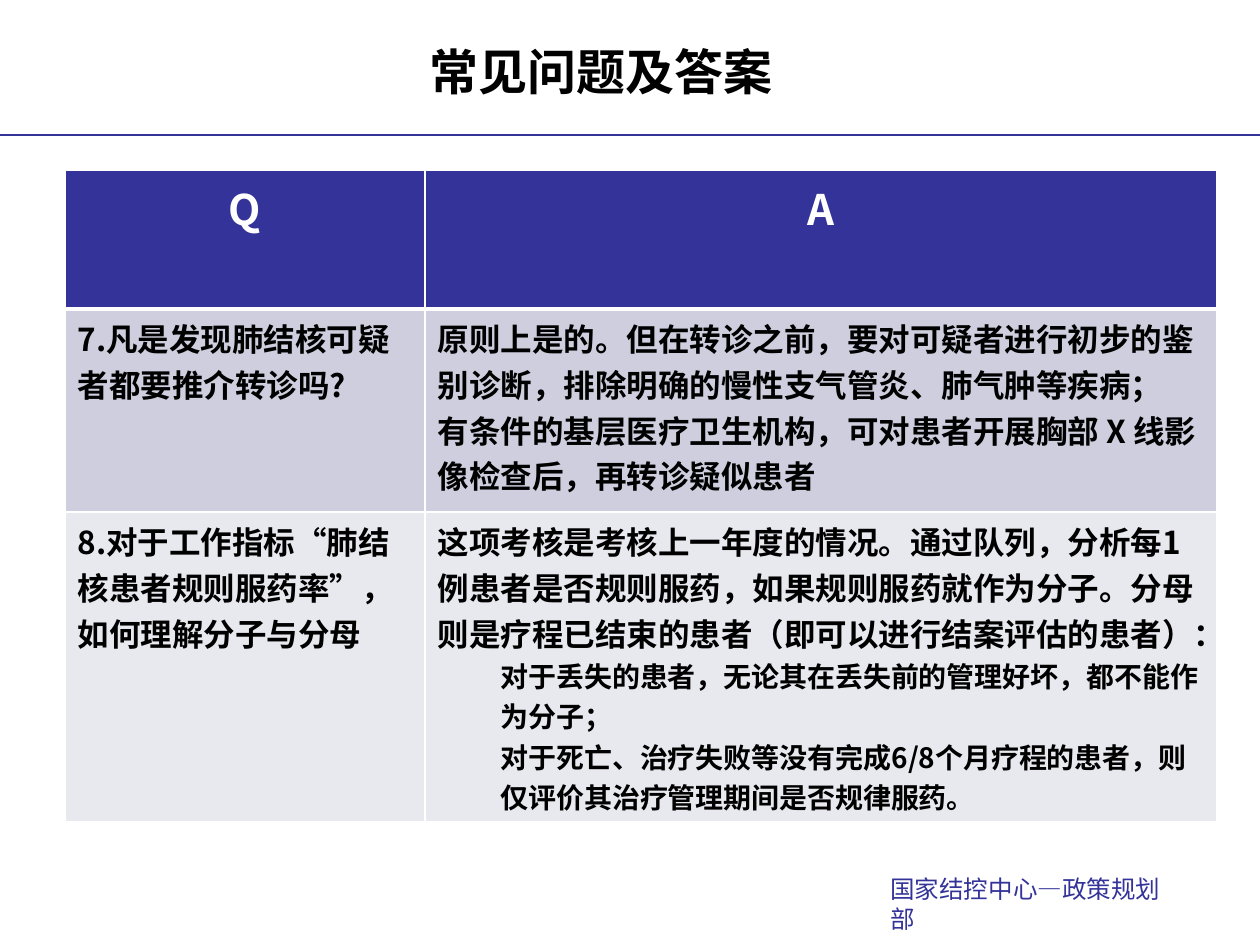
from dataclasses import dataclass

from lxml.etree import SubElement
from pptx import Presentation
from pptx.dml.color import RGBColor
from pptx.enum.text import MSO_ANCHOR, PP_ALIGN
from pptx.oxml import parse_xml
from pptx.oxml.ns import qn
from pptx.util import Pt

A_NS = "http://schemas.openxmlformats.org/drawingml/2006/main"
PX = 914400 // 126


@dataclass(frozen=True)
class Theme:
    navy: str = "333399"
    black: str = "000000"
    white: str = "FFFFFF"
    bands: tuple = ("CECEDE", "E8E8EF")
    sans: str = "Arial"
    cjk: str = "Noto Sans CJK SC"
    title: int = 28
    header: int = 24
    body: int = 18
    detail: int = 16
    footer: int = 14
    thin: int = 1
    thick: int = 3


THEME = Theme()

TITLE = "常见问题及答案"
HEADINGS = ("Q", "A")
# Each cell is a list of (level, text).
QUESTIONS = [
    (
        [(0, "7.凡是发现肺结核可疑者都要推介转诊吗?")],
        [
            (0, "原则上是的。但在转诊之前，要对可疑者进行初步的鉴别诊断，排除明确的慢性支气管炎、肺气肿等疾病；"),
            (0, "有条件的基层医疗卫生机构，可对患者开展胸部 X 线影像检查后，再转诊疑似患者"),
        ],
    ),
    (
        [(0, "8.对于工作指标“肺结核患者规则服药率”，如何理解分子与分母")],
        [
            (0, "这项考核是考核上一年度的情况。通过队列，分析每1例患者是否规则服药，如果规则服药就作为分子。"
                "分母则是疗程已结束的患者（即可以进行结案评估的患者）："),
            (1, "对于丢失的患者，无论其在丢失前的管理好坏，都不能作为分子；"),
            (1, "对于死亡、治疗失败等没有完成6/8个月疗程的患者，则仅评价其治疗管理期间是否规律服药。"),
        ],
    ),
]
FOOTER = (("国家结控中心", THEME.sans), ("—", THEME.cjk), ("政策规划部", THEME.sans))

SLIDE_SIZE = (1260, 945)
TITLE_BOX = (34, 6, 1134, 129)
RULE_Y = 135
TABLE_AT = (65, 170)
COLUMNS = (360, 792)
ROWS = (139, 203, 310)
FOOTER_BOX = (878, 868, 319, 42)
DETAIL_INDENT = 63


def px(*lengths):
    return [length * PX for length in lengths]


def style(run, size, color, face, bold=False):
    font = run.font
    font.size, font.bold, font.name = Pt(size), bold, face
    font.color.rgb = RGBColor.from_string(color)
    SubElement(run._r.get_or_add_rPr(), qn("a:ea"), typeface=face)


def set_borders(cell, bottom):
    props = cell._tc.get_or_add_tcPr()
    widths = {"L": THEME.thin, "R": THEME.thin, "T": THEME.thin, "B": bottom}
    for index, (side, width) in enumerate(widths.items()):
        props.insert(index, parse_xml(
            f'<a:ln{side} xmlns:a="{A_NS}" w="{Pt(width)}"><a:solidFill>'
            f'<a:srgbClr val="{THEME.white}"/></a:solidFill></a:ln{side}>'))


def fill_cell(cell, paragraphs, fill, color, sizes, align=None, bottom=THEME.thin):
    cell.fill.solid()
    cell.fill.fore_color.rgb = RGBColor.from_string(fill)
    set_borders(cell, bottom)
    frame = cell.text_frame
    frame.text = "\n".join(text for _, text in paragraphs)
    for paragraph, (level, _) in zip(frame.paragraphs, paragraphs):
        paragraph.level = level
        paragraph.alignment = align
        if level:
            props = paragraph._p.get_or_add_pPr()
            props.set("marL", str(DETAIL_INDENT * PX))
            props.set("indent", "0")
        style(paragraph.runs[0], sizes[level], color, THEME.cjk, bold=True)


def add_title(slide):
    title = slide.shapes.title
    title.left, title.top, title.width, title.height = px(*TITLE_BOX)
    frame = title.text_frame
    frame.text = TITLE
    frame.vertical_anchor = MSO_ANCHOR.MIDDLE
    frame.paragraphs[0].alignment = PP_ALIGN.CENTER
    style(frame.paragraphs[0].runs[0], THEME.title, THEME.black, THEME.sans, bold=True)


def add_rule(slide):
    rule = slide.shapes.add_connector(1, *px(0, RULE_Y, SLIDE_SIZE[0], RULE_Y))
    rule.line.color.rgb = RGBColor.from_string(THEME.navy)
    rule.line.width = Pt(THEME.thin)
    SubElement(rule._element.spPr, qn("a:effectLst"))


def add_questions(slide):
    table = slide.shapes.add_table(
        len(ROWS), len(COLUMNS), *px(*TABLE_AT, sum(COLUMNS), sum(ROWS))).table
    for column, width in zip(table.columns, COLUMNS):
        column.width = width * PX
    for row, height in zip(table.rows, ROWS):
        row.height = height * PX
    for index, heading in enumerate(HEADINGS):
        fill_cell(table.cell(0, index), [(0, heading)], THEME.navy, THEME.white,
                  (THEME.header,), PP_ALIGN.CENTER, THEME.thick)
    for row, (entry, band) in enumerate(zip(QUESTIONS, THEME.bands), start=1):
        for column, paragraphs in enumerate(entry):
            fill_cell(table.cell(row, column), paragraphs, band, THEME.black,
                      (THEME.body, THEME.detail))
    # The first body row shares its top edge with the heavy header edge.
    for cell in table.rows[1].cells:
        cell._tc.tcPr.find(qn("a:lnT")).set("w", str(Pt(THEME.thick)))


def add_footer(slide):
    frame = slide.shapes.add_textbox(*px(*FOOTER_BOX)).text_frame
    frame.word_wrap = True
    for text, face in FOOTER:
        run = frame.paragraphs[0].add_run()
        run.text = text
        style(run, THEME.footer, THEME.navy, face)


def main():
    deck = Presentation()
    deck.slide_width, deck.slide_height = px(*SLIDE_SIZE)
    slide = deck.slides.add_slide(deck.slide_layouts[5])
    add_rule(slide)
    add_footer(slide)
    add_title(slide)
    add_questions(slide)
    deck.save("out.pptx")


if __name__ == "__main__":
    main()
